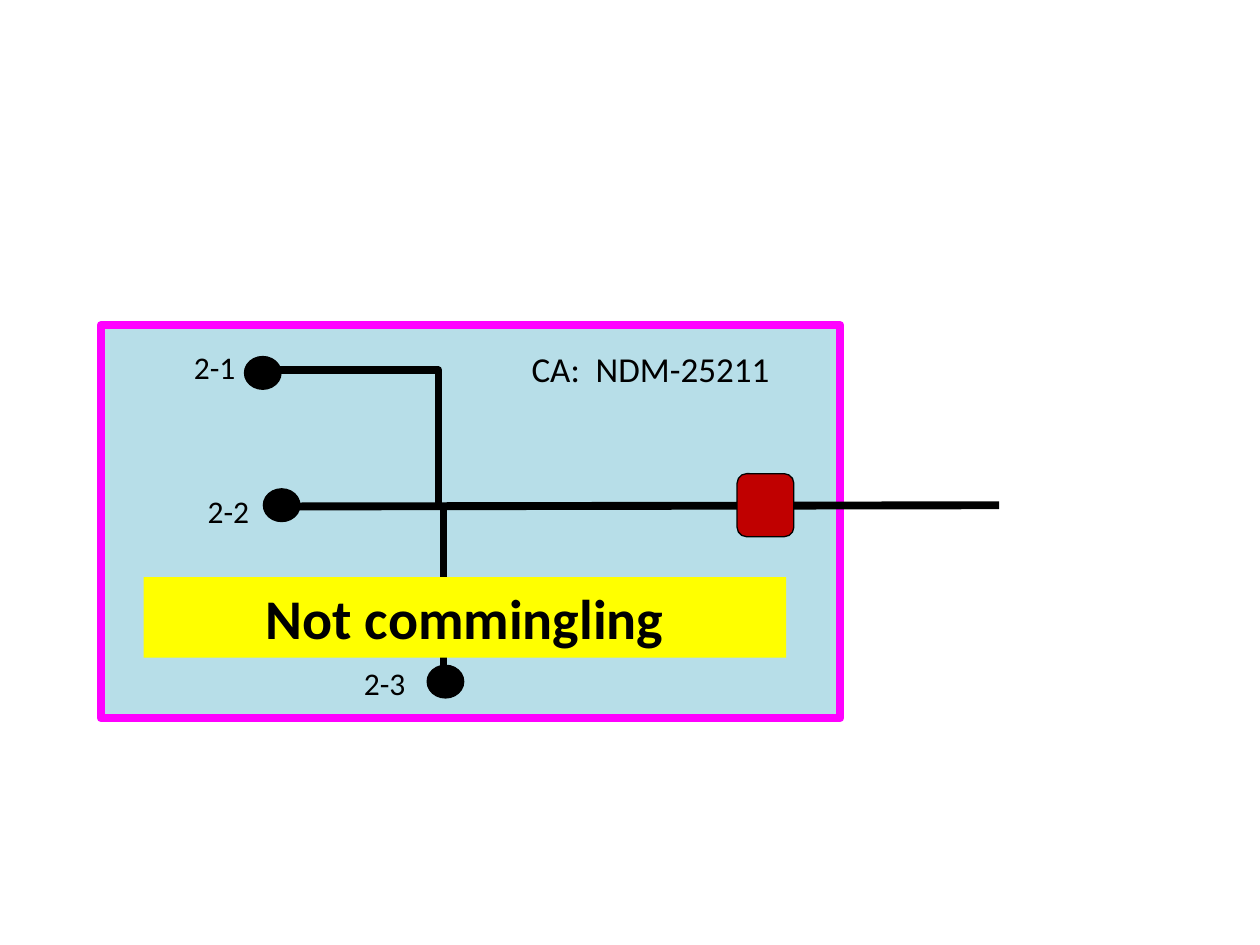
"""Builds a slide of a three-well gathering layout that does not commingle."""
from dataclasses import dataclass

from lxml.etree import SubElement
from pptx import Presentation
from pptx.dml.color import RGBColor
from pptx.enum.shapes import MSO_CONNECTOR, MSO_SHAPE
from pptx.enum.text import PP_ALIGN
from pptx.oxml.ns import qn
from pptx.util import Pt

PX = 9144


@dataclass(frozen=True)
class Theme:
    font: str = "Calibri"
    ink: RGBColor = RGBColor(0, 0, 0)
    lease: RGBColor = RGBColor(0xB7, 0xDE, 0xE8)
    border: RGBColor = RGBColor(0xFF, 0, 0xFF)
    meter: RGBColor = RGBColor(0xC0, 0, 0)
    notice: RGBColor = RGBColor(0xFF, 0xFF, 0)
    well_size: int = 18
    agreement_size: int = 20
    notice_size: int = 32
    heavy: float = 4.5
    thin: float = 0.75


theme = Theme()
deck = Presentation()
deck.slide_width, deck.slide_height = 1000 * PX, 750 * PX
slide = deck.slides.add_slide(deck.slide_layouts[6])


def add_block(kind, box, fill, line=None, width=theme.thin):
    block = slide.shapes.add_shape(kind, *(n * PX for n in box))
    block.shadow.inherit = False
    block.fill.solid()
    block.fill.fore_color.rgb = fill
    if line is None:
        block.line.fill.background()
    else:
        block.line.color.rgb = line
        block.line.width = Pt(width)
    return block


def add_label(text, box, *, size, fill=theme.lease, bold=False, align=PP_ALIGN.LEFT):
    label = slide.shapes.add_textbox(*(n * PX for n in box))
    label.fill.solid()
    label.fill.fore_color.rgb = fill
    label.text_frame.word_wrap = True
    paragraph = label.text_frame.paragraphs[0]
    paragraph.alignment = align
    run = paragraph.add_run()
    run.text = text
    run.font.name = theme.font
    run.font.size = Pt(size)
    run.font.bold = bold
    run.font.color.rgb = theme.ink


add_block(MSO_SHAPE.RECTANGLE, (80, 258, 587, 312), theme.lease, theme.border, theme.heavy)

for route in ((223, 402, 793, 401), (352, 540, 352, 401)):
    pipe = slide.shapes.add_connector(MSO_CONNECTOR.STRAIGHT, *(n * PX for n in route))
    pipe.line.color.rgb = theme.ink
    pipe.line.width = Pt(theme.heavy)
    SubElement(pipe._element.spPr, qn("a:effectLst"))

bend = slide.shapes.build_freeform(209, 294, scale=PX)
bend.add_line_segments([(348, 294), (348, 401)], close=False)
elbow = bend.convert_to_shape()
elbow.shadow.inherit = False
elbow.fill.background()
elbow.line.color.rgb = theme.ink
elbow.line.width = Pt(theme.heavy)

add_block(MSO_SHAPE.ROUNDED_RECTANGLE, (585, 376, 45, 50), theme.meter, theme.ink)

wells = (
    ("2-1", (144, 271), (194, 283)),
    ("2-2", (155, 386), (209, 388)),
    ("2-3", (279, 522), (339, 528)),
)
for well, corner, _ in wells:
    add_label(well, (*corner, 70, 40), size=theme.well_size)
add_label("CA:  NDM-25211", (412, 271, 231, 44), size=theme.agreement_size)
for _, _, wellhead in wells:
    add_block(MSO_SHAPE.OVAL, (*wellhead, 29, 26), theme.ink, theme.ink)

add_label("Not commingling", (114, 458, 510, 64), size=theme.notice_size,
          fill=theme.notice, bold=True, align=PP_ALIGN.CENTER)

deck.save("out.pptx")
